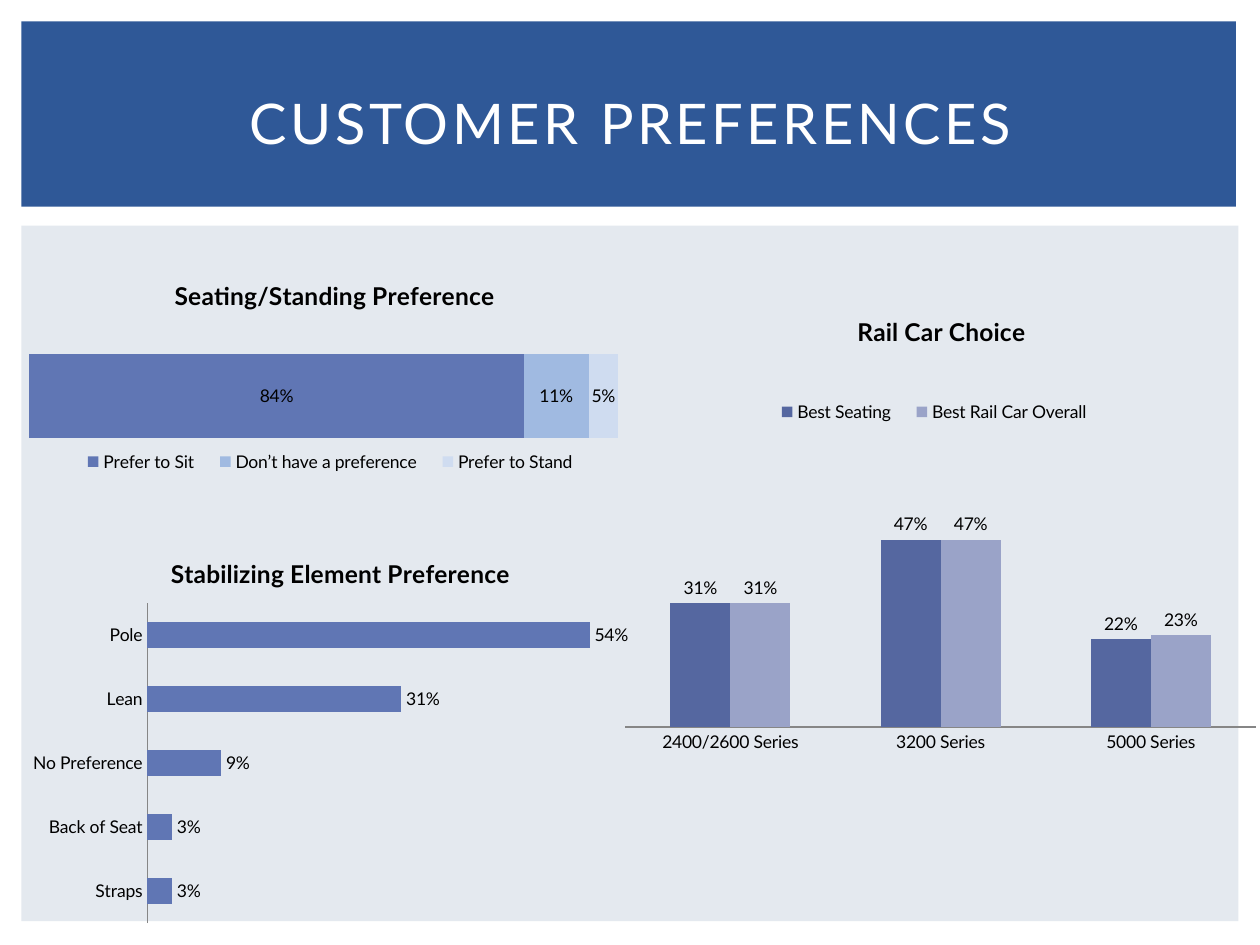
import pptx
import pptx.chart.data
import pptx.dml.color
import pptx.enum.chart
import pptx.enum.shapes
import pptx.enum.text
import pptx.oxml
import pptx.oxml.ns
import pptx.util

Inches, Pt = pptx.util.Inches, pptx.util.Pt
qn = pptx.oxml.ns.qn
enum = pptx.enum.chart
kinds = enum.XL_CHART_TYPE

THEME = {
    "font": "Lato",
    "head": 32,
    "title": 14,
    "text": 10,
    "band": "2F5897",
    "panel": "E4E9EF",
    "white": "FFFFFF",
    "ink": "000000",
    "axis": "868686",
}

HEAD = "CUSTOMER PREFERENCES"
HEAD_BOX = (0.42, 0.39, 9.17, 1.15)
BLOCKS = [
    ("panel", (0.17, 1.79, 9.66, 5.52)),
    ("band", (0.17, 0.17, 9.64, 1.47)),
]

# Boxes are in inches; title, legend and plot are fractions of the chart.
CHARTS = [
    {
        "title": "Stabilizing Element Preference",
        "kind": kinds.BAR_CLUSTERED,
        "box": (0.17, 4.25, 5, 3.14),
        "cats": ["Straps", "Back of Seat", "No Preference", "Lean", "Pole"],
        "series": [
            ("Stabilizing Element Preference",
             (0.03, 0.03, 0.09, 0.31, 0.54), "6076B4"),
        ],
        "max": 0.6,
        "overlap": -25,
        "axis": True,
        "title_at": (0.23, 0.04),
        "legend_at": None,
        "plot_at": (0.2, 0.17, 0.78, 0.81),
    },
    {
        "title": "Seating/Standing Preference",
        "kind": kinds.BAR_STACKED,
        "box": (0.08, 2, 5.08, 2.08),
        "cats": ["1"],
        "series": [
            ("Prefer to Sit", (0.84,), "6076B4"),
            ("Don’t have a preference", (0.11,), "A0BAE1"),
            ("Prefer to Stand", (0.05,), "CFDCF0"),
        ],
        "max": 1,
        "overlap": 100,
        "axis": False,
        "title_at": (0.25, 0.08),
        "legend_at": (0.09, 0.75, 0.82, 0.1),
        "plot_at": (0.03, 0.15, 0.92, 0.8),
    },
    {
        "title": "Rail Car Choice",
        "kind": kinds.COLUMN_CLUSTERED,
        "box": (4.86, 2.25, 5.16, 4),
        "cats": ["2400/2600 Series", "3200 Series", "5000 Series"],
        "series": [
            ("Best Seating", (0.31, 0.47, 0.22), "5567A0"),
            ("Best Rail Car Overall", (0.31, 0.47, 0.23), "9AA3C8"),
        ],
        "max": 1,
        "overlap": 0,
        "axis": True,
        "title_at": (0.37, 0.05),
        "legend_at": (0.23, 0.23, 0.53, 0.05),
        "plot_at": (0.02, 0.09, 0.97, 0.79),
    },
]


def rgb(code):
    return pptx.dml.color.RGBColor.from_string(code)


def style(font, size, color, bold=False):
    font.name, font.size, font.bold = THEME["font"], Pt(size), bold
    font.color.rgb = rgb(THEME[color])


def place(part, spot, after=None, inner=False):
    """Give a chart part a manual layout, put after the named child."""
    for old in part.findall(qn("c:layout")):
        part.remove(old)
    rows = [("layoutTarget", "inner")] if inner else []
    rows += [("xMode", "edge"), ("yMode", "edge"), *zip("xywh", spot)]
    body = "".join(f'<c:{tag} val="{val}"/>' for tag, val in rows)
    space = pptx.oxml.ns.nsdecls("c")
    node = pptx.oxml.parse_xml(
        f"<c:layout {space}><c:manualLayout>{body}</c:manualLayout></c:layout>")
    if after:
        part.find(qn(after)).addnext(node)
    else:
        part.insert(0, node)


def add_block(slide, color, box):
    block = slide.shapes.add_shape(
        pptx.enum.shapes.MSO_SHAPE.RECTANGLE, *map(Inches, box))
    block.shadow.inherit = False
    block.fill.solid()
    block.fill.fore_color.rgb = rgb(THEME[color])
    block.line.fill.background()


def add_head(slide):
    head = slide.shapes.title
    head.left, head.top, head.width, head.height = map(Inches, HEAD_BOX)
    frame = head.text_frame
    frame.text = HEAD
    frame.auto_size = pptx.enum.text.MSO_AUTO_SIZE.NONE
    frame.vertical_anchor = pptx.enum.text.MSO_ANCHOR.MIDDLE
    line = frame.paragraphs[0]
    line.alignment = pptx.enum.text.PP_ALIGN.CENTER
    style(line.runs[0].font, THEME["head"], "white")
    line.runs[0]._r.get_or_add_rPr().set("spc", "200")
    head.element.getparent().append(head.element)  # in front of the band


def set_axes(chart, item):
    vals, cats = chart.value_axis, chart.category_axis
    vals.minimum_scale, vals.maximum_scale = 0, item["max"]
    vals.has_major_gridlines = False
    vals.visible = False
    cats.visible = item["axis"]
    cats.major_tick_mark = enum.XL_TICK_MARK.NONE
    cats.format.line.color.rgb = rgb(THEME["axis"])
    style(cats.tick_labels.font, THEME["text"], "ink")


def add_chart(slide, item):
    data = pptx.chart.data.CategoryChartData(number_format="0%")
    data.categories = item["cats"]
    for name, vals, _ in item["series"]:
        data.add_series(name, vals)
    chart = slide.shapes.add_chart(
        item["kind"], *map(Inches, item["box"]), data).chart
    style(chart.font, THEME["text"], "ink")

    chart.has_title = True
    frame = chart.chart_title.text_frame
    frame.text = item["title"]
    style(frame.paragraphs[0].runs[0].font, THEME["title"], "ink", True)
    place(chart.chart_title._element, item["title_at"], "c:tx")

    chart.has_legend = item["legend_at"] is not None
    if chart.has_legend:
        chart.legend.position = enum.XL_LEGEND_POSITION.RIGHT
        chart.legend.include_in_layout = False
        style(chart.legend.font, THEME["text"], "ink")
        place(chart.legend._element, item["legend_at"], "c:legendPos")

    set_axes(chart, item)
    plot = chart.plots[0]
    plot.gap_width, plot.overlap = 150, item["overlap"]
    plot.vary_by_categories = False
    place(plot._element.getparent(), item["plot_at"], inner=True)

    spots = enum.XL_LABEL_POSITION
    stacked = item["kind"] == kinds.BAR_STACKED
    for series, (_, _, color) in zip(plot.series, item["series"]):
        series.format.fill.solid()
        series.format.fill.fore_color.rgb = rgb(color)
        labels = series.data_labels
        labels.show_value = True
        labels.number_format = "0%"
        labels.number_format_is_linked = False
        labels.position = spots.CENTER if stacked else spots.OUTSIDE_END
        style(labels.font, THEME["text"], "ink")


def main():
    deck = pptx.Presentation()
    deck.slide_width, deck.slide_height = Inches(10), Inches(7.5)
    slide = deck.slides.add_slide(deck.slide_layouts[5])
    for color, box in BLOCKS:
        add_block(slide, color, box)
    add_head(slide)
    for item in CHARTS:
        add_chart(slide, item)
    deck.save("out.pptx")


if __name__ == "__main__":
    main()
